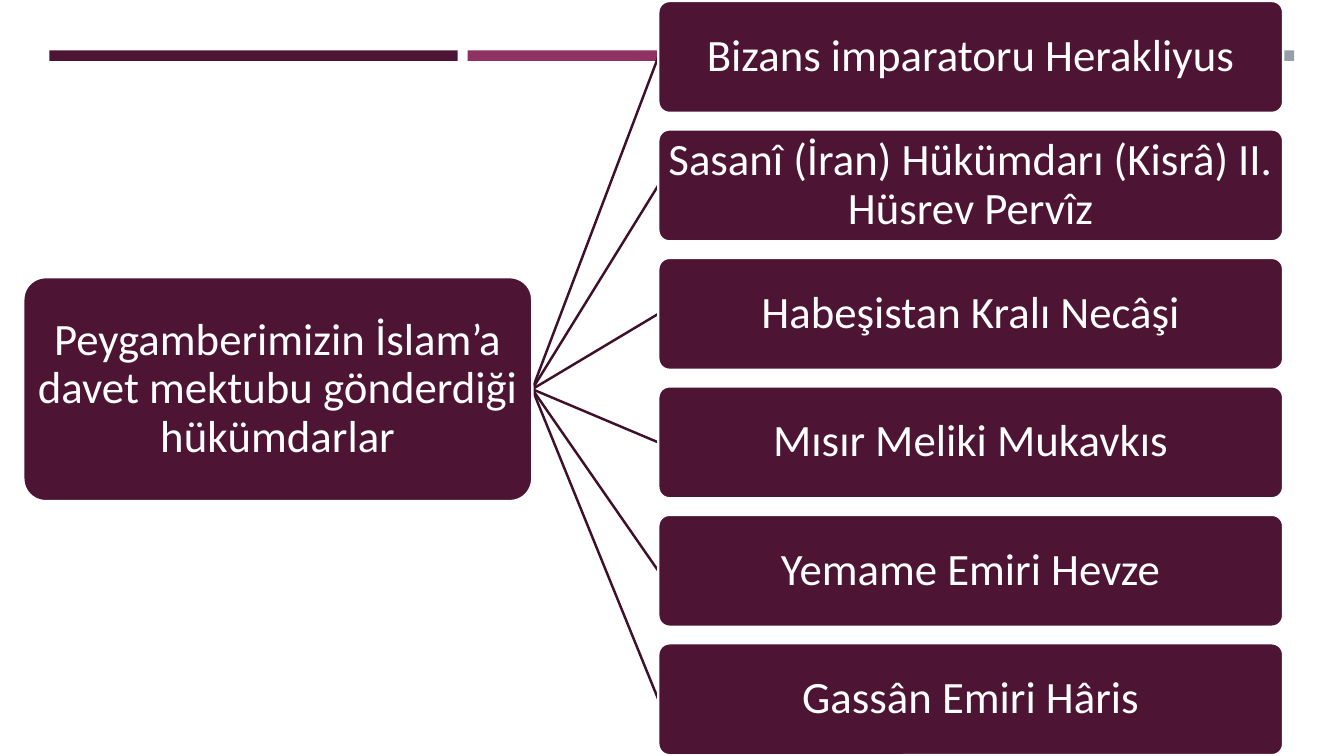
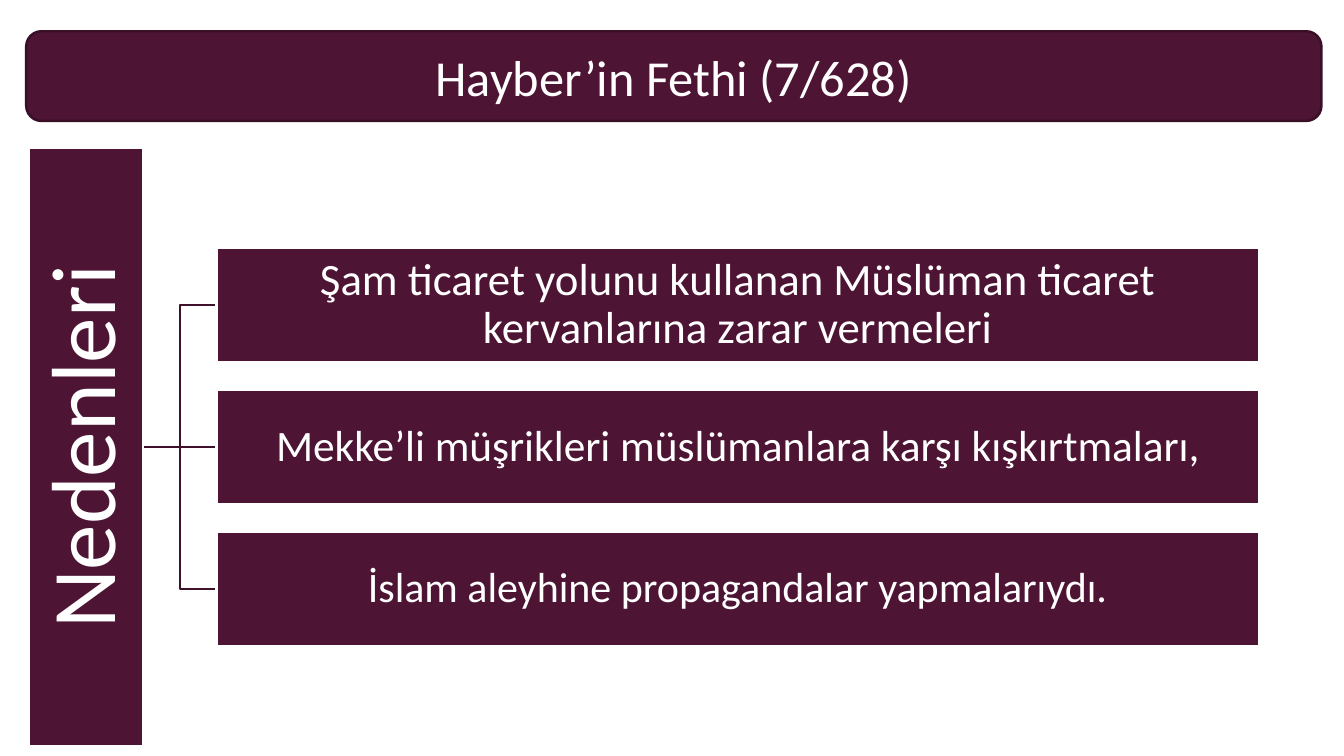
from dataclasses import dataclass

from lxml import etree
from pptx import Presentation
from pptx.dml.color import RGBColor
from pptx.enum.shapes import MSO_CONNECTOR, MSO_SHAPE
from pptx.enum.text import MSO_ANCHOR, PP_ALIGN
from pptx.oxml.ns import qn
from pptx.shapes.autoshape import Shape
from pptx.slide import Slide
from pptx.util import Pt

RECT, ROUNDED = MSO_SHAPE.RECTANGLE, MSO_SHAPE.ROUNDED_RECTANGLE
STRAIGHT, ELBOW = MSO_CONNECTOR.STRAIGHT, MSO_CONNECTOR.ELBOW
CENTER, MIDDLE = PP_ALIGN.CENTER, MSO_ANCHOR.MIDDLE
LEFT_SIDE, RIGHT_SIDE = 1, 3


@dataclass(frozen=True)
class Theme:
    font: str = "Calibri"
    plum: RGBColor = RGBColor(0x4D, 0x14, 0x34)
    magenta: RGBColor = RGBColor(0x90, 0x31, 0x63)
    gray: RGBColor = RGBColor(0x96, 0x9F, 0xA7)
    white: RGBColor = RGBColor(0xFF, 0xFF, 0xFF)
    title_line: RGBColor = RGBColor(0x39, 0x0F, 0x26)
    connector: RGBColor = RGBColor(0x3E, 0x10, 0x2A)
    line_width: float = 1.75
    title_size: float = 36
    body_size: float = 32
    label_size: float = 65


THEME = Theme()


@dataclass(frozen=True)
class Box:
    text: str
    x: float
    y: float
    w: float
    h: float
    size: float = THEME.body_size
    radius: float = 0
    line: RGBColor = THEME.white
    spacing: float = 0.9
    inset: float = 1.5
    upward: bool = False


def add_block(s: Slide, kind: MSO_SHAPE, x: float, y: float, w: float, h: float,
              fill: RGBColor) -> Shape:
    sp = s.shapes.add_shape(kind, Pt(x), Pt(y), Pt(w), Pt(h))
    sp.shadow.inherit = False
    sp.fill.solid()
    sp.fill.fore_color.rgb = fill
    sp.line.fill.background()
    return sp


def add_bands(s: Slide) -> None:
    for i, color in enumerate((THEME.plum, THEME.magenta, THEME.gray)):
        add_block(s, RECT, 35.3 + i * 298.8, 36, 291.6, 7.5, color)


def add_box(s: Slide, box: Box) -> Shape:
    kind = ROUNDED if box.radius else RECT
    sp = add_block(s, kind, box.x, box.y, box.w, box.h, THEME.plum)
    if box.radius:
        sp.adjustments[0] = box.radius
    sp.line.color.rgb = box.line
    sp.line.width = Pt(THEME.line_width)
    tf = sp.text_frame
    tf.word_wrap = True
    tf.vertical_anchor = MIDDLE
    tf.margin_left = tf.margin_right = Pt(box.inset)
    tf.margin_top = tf.margin_bottom = Pt(box.inset)
    if box.upward:
        tf._txBody.bodyPr.set("vert", "vert270")
    p = tf.paragraphs[0]
    p.text = box.text
    p.alignment = CENTER
    p.line_spacing = box.spacing
    p.font.name = THEME.font
    p.font.size = Pt(box.size)
    p.font.color.rgb = THEME.white
    return sp


def connect(s: Slide, root: Shape, child: Shape, kind: MSO_CONNECTOR) -> None:
    """Join root's right side to child's left side, behind both boxes."""
    line = s.shapes.add_connector(kind, 0, 0, 0, 0)
    line.begin_connect(root, RIGHT_SIDE)
    line.end_connect(child, LEFT_SIDE)
    line.line.color.rgb = THEME.connector
    line.line.width = Pt(THEME.line_width)
    etree.SubElement(line._element.spPr, qn("a:effectLst"))
    root._element.addprevious(line._element)


def add_tree(s: Slide, root: Box, children: list[Box], kind: MSO_CONNECTOR) -> None:
    root_sp = add_box(s, root)
    for child in children:
        level = abs(root.y + root.h / 2 - child.y - child.h / 2) < 1
        connect(s, root_sp, add_box(s, child), STRAIGHT if level else kind)


def build_rulers(s: Slide) -> None:
    add_bands(s)
    rulers = (
        "Bizans imparatoru Herakliyus",
        "Sasanî (İran) Hükümdarı (Kisrâ) II. Hüsrev Pervîz",
        "Habeşistan Kralı Necâşi",
        "Mısır Meliki Mukavkıs",
        "Yemame Emiri Hevze",
        "Gassân Emiri Hâris",
    )
    root = Box("Peygamberimizin İslam’a davet mektubu gönderdiği hükümdarlar",
               16.6, 198, 363.6, 160, radius=0.1)
    children = [Box(text, 470.2, 0.7 + i * 91.76, 446.4, 80, radius=0.1)
                for i, text in enumerate(rulers)]
    add_tree(s, root, children, STRAIGHT)


def build_conquest(s: Slide) -> None:
    add_box(s, Box("Hayber’in Fethi (7/628)", 18.7, 22.3, 925.2, 64.1, THEME.title_size,
                   radius=0.17, line=THEME.title_line, spacing=1, inset=3.6))
    reasons = (
        ("Şam ticaret yolunu kullanan Müslüman ticaret kervanlarına zarar vermeleri",
         THEME.body_size),
        ("Mekke’li müşrikleri müslümanlara karşı kışkırtmaları,", THEME.body_size - 1),
        ("İslam aleyhine propagandalar yapmalarıydı.", THEME.body_size - 2),
    )
    root = Box("Nedenleri", 20.9, 105.8, 81.2, 427, THEME.label_size,
               inset=3.6, upward=True)
    children = [Box(text, 154.8, 177.1 + i * 101.5, 744.5, 81.4, size)
                for i, (text, size) in enumerate(reasons)]
    add_tree(s, root, children, ELBOW)


def main() -> None:
    prs = Presentation()
    prs.slide_width, prs.slide_height = Pt(960), Pt(540)
    for build in (build_rulers, build_conquest):
        build(prs.slides.add_slide(prs.slide_layouts[6]))
    prs.save("out.pptx")


if __name__ == "__main__":
    main()
